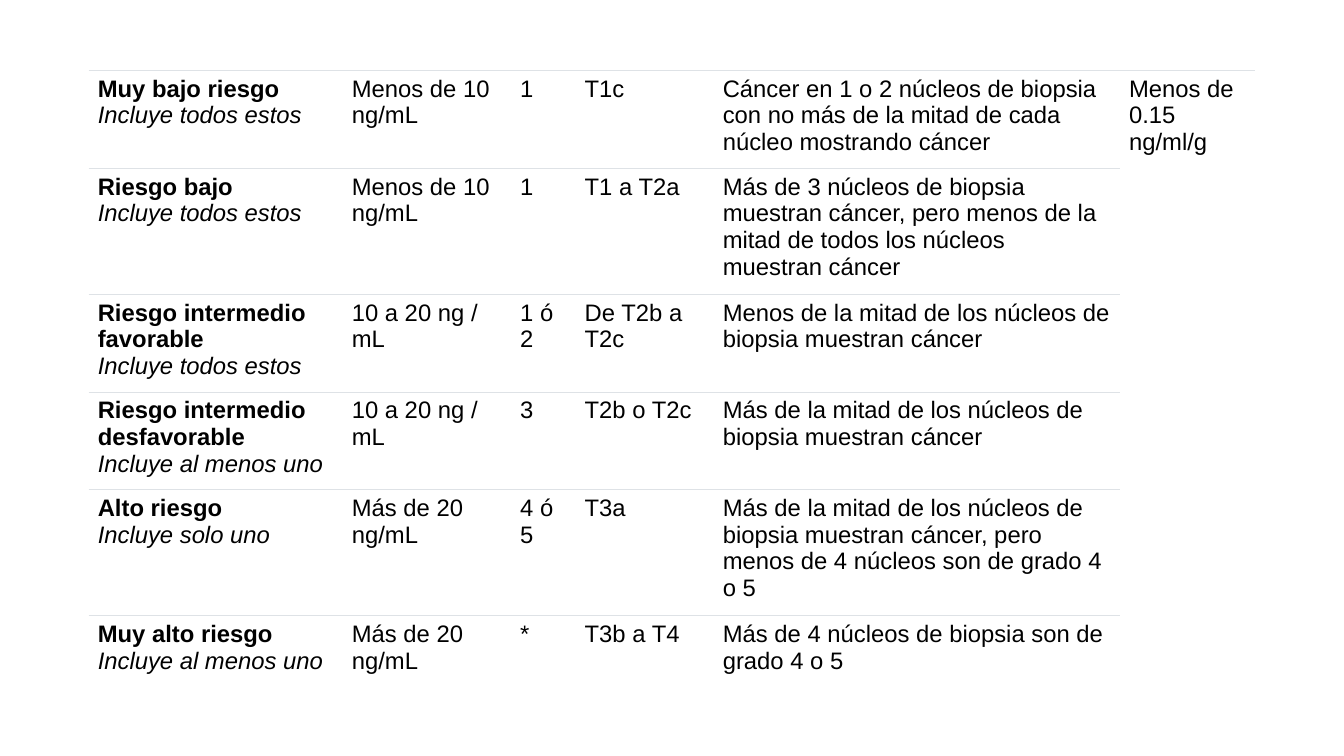
from dataclasses import dataclass

from lxml import etree
from pptx import Presentation
from pptx.dml.color import RGBColor
from pptx.oxml.ns import qn
from pptx.util import Inches, Pt


@dataclass(frozen=True)
class Theme:
    font: str = "Arial"
    size: int = 17
    ink: str = "000000"
    rule: str = "DEE2E6"
    rule_width: float = 0.6


THEME = Theme()

COLUMN_WIDTHS = [2.52, 1.67, 0.64, 1.37, 4.03, 1.34]
ROW_HEIGHTS = [0.97, 1.25, 0.97, 0.97, 1.25, 0.69]

# Risk group, condition, PSA, grade group, stage, biopsy, PSA density
RISK_GROUPS = [
    ("Muy bajo riesgo", "Incluye todos estos", "Menos de 10 ng/mL", "1", "T1c",
     "Cáncer en 1 o 2 núcleos de biopsia con no más de la mitad de cada núcleo mostrando cáncer",
     "Menos de 0.15 ng/ml/g"),
    ("Riesgo bajo", "Incluye todos estos", "Menos de 10 ng/mL", "1", "T1 a T2a",
     "Más de 3 núcleos de biopsia muestran cáncer, pero menos de la mitad de todos los núcleos "
     "muestran cáncer", ""),
    ("Riesgo intermedio favorable", "Incluye todos estos", "10 a 20 ng / mL", "1 ó 2",
     "De T2b a T2c", "Menos de la mitad de los núcleos de biopsia muestran cáncer", ""),
    ("Riesgo intermedio desfavorable", "Incluye al menos uno", "10 a 20 ng / mL", "3",
     "T2b o T2c", "Más de la mitad de los núcleos de biopsia muestran cáncer", ""),
    ("Alto riesgo", "Incluye solo uno", "Más de 20 ng/mL", "4 ó 5", "T3a",
     "Más de la mitad de los núcleos de biopsia muestran cáncer, pero menos de 4 núcleos son "
     "de grado 4 o 5", ""),
    ("Muy alto riesgo", "Incluye al menos uno", "Más de 20 ng/mL", "*", "T3b a T4",
     "Más de 4 núcleos de biopsia son de grado 4 o 5", ""),
]


def set_borders(cell, ruled_sides):
    """Rule the given sides (L, R, T, B) and clear the others."""
    properties = cell._tc.get_or_add_tcPr()
    for side in "LRTB":
        border = etree.SubElement(properties, qn(f"a:ln{side}"))
        if side in ruled_sides:
            border.set("w", str(Pt(THEME.rule_width)))
            fill = etree.SubElement(border, qn("a:solidFill"))
            etree.SubElement(fill, qn("a:srgbClr"), val=THEME.rule)
        else:
            border.set("w", "0")
            etree.SubElement(border, qn("a:noFill"))


def write_cell(cell, text):
    cell.margin_left = cell.margin_right = Inches(0.09)
    cell.margin_top = cell.margin_bottom = Inches(0.05)
    paragraph = cell.text_frame.paragraphs[0]
    paragraph.text = text
    for line_break in paragraph._p.findall(qn("a:br")):
        etree.SubElement(line_break, qn("a:rPr"), sz=str(THEME.size * 100))
    for run in paragraph.runs:
        run.font.name = THEME.font
        run.font.size = Pt(THEME.size)
        run.font.color.rgb = RGBColor.from_string(THEME.ink)
        run.font.bold = run.font.italic = False


def emphasize_group(cell):
    name, condition = cell.text_frame.paragraphs[0].runs
    name.font.bold = True
    condition.font.italic = True


def add_risk_table(slide):
    table = slide.shapes.add_table(
        len(ROW_HEIGHTS), len(COLUMN_WIDTHS), Inches(0.88), Inches(0.7),
        Inches(sum(COLUMN_WIDTHS)), Inches(sum(ROW_HEIGHTS))).table
    table.first_row = table.horz_banding = False
    for column, width in zip(table.columns, COLUMN_WIDTHS):
        column.width = Inches(width)
    for row, height in zip(table.rows, ROW_HEIGHTS):
        row.height = Inches(height)

    last_row = len(ROW_HEIGHTS) - 1
    last_column = len(COLUMN_WIDTHS) - 1
    for r, (name, condition, *criteria) in enumerate(RISK_GROUPS):
        for c, text in enumerate([f"{name}\v{condition}", *criteria]):
            cell = table.cell(r, c)
            write_cell(cell, text)
            # The density column is ruled only along the top of the table
            if c == last_column:
                sides = "T" if r == 0 else ""
            else:
                sides = "T" if r == last_row else "TB"
            set_borders(cell, sides)
            cell.fill.background()
        emphasize_group(table.cell(r, 0))


def main():
    presentation = Presentation()
    presentation.slide_width = Inches(13.33)
    presentation.slide_height = Inches(7.5)
    slide = presentation.slides.add_slide(presentation.slide_layouts[6])
    add_risk_table(slide)
    presentation.save("out.pptx")


if __name__ == "__main__":
    main()
